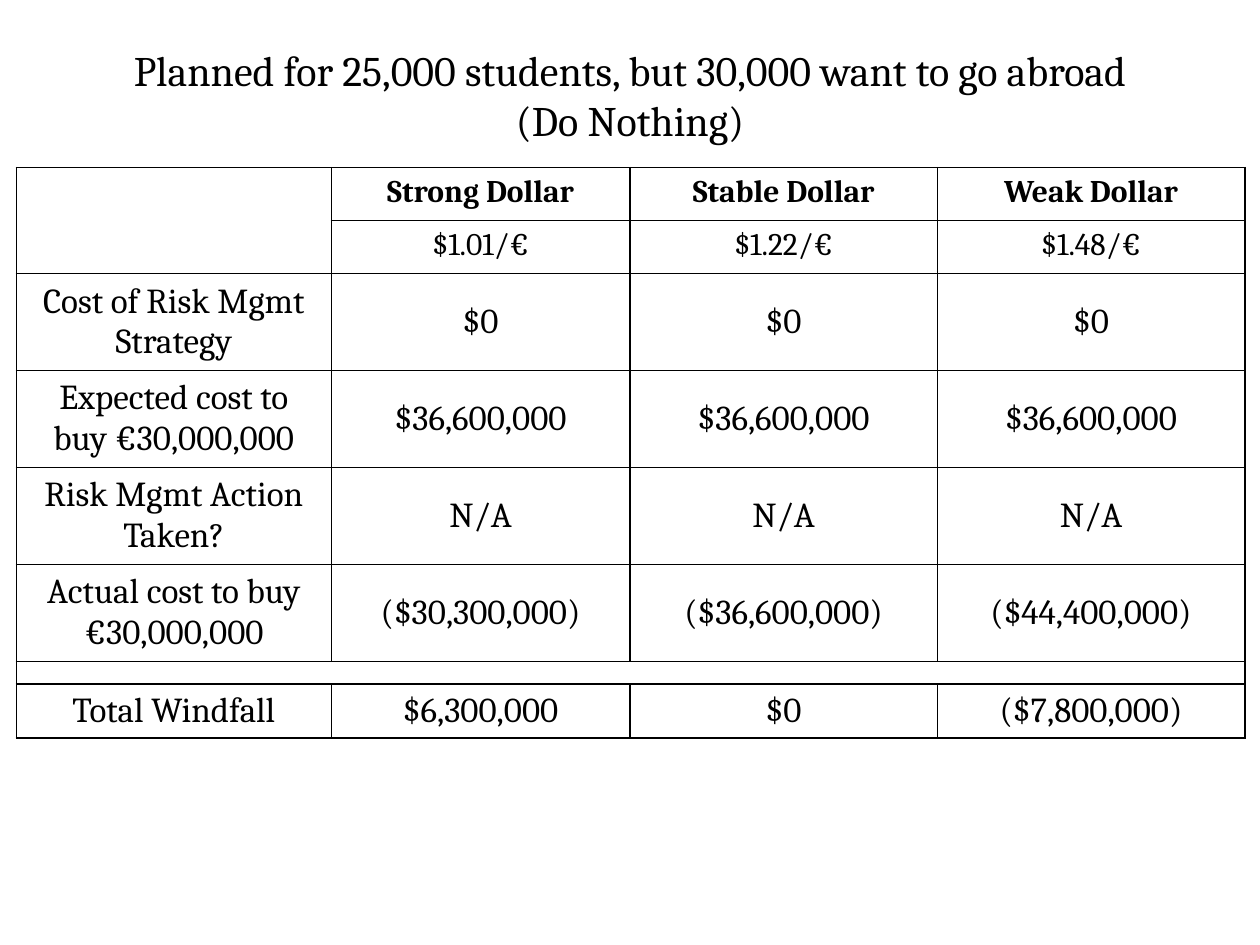
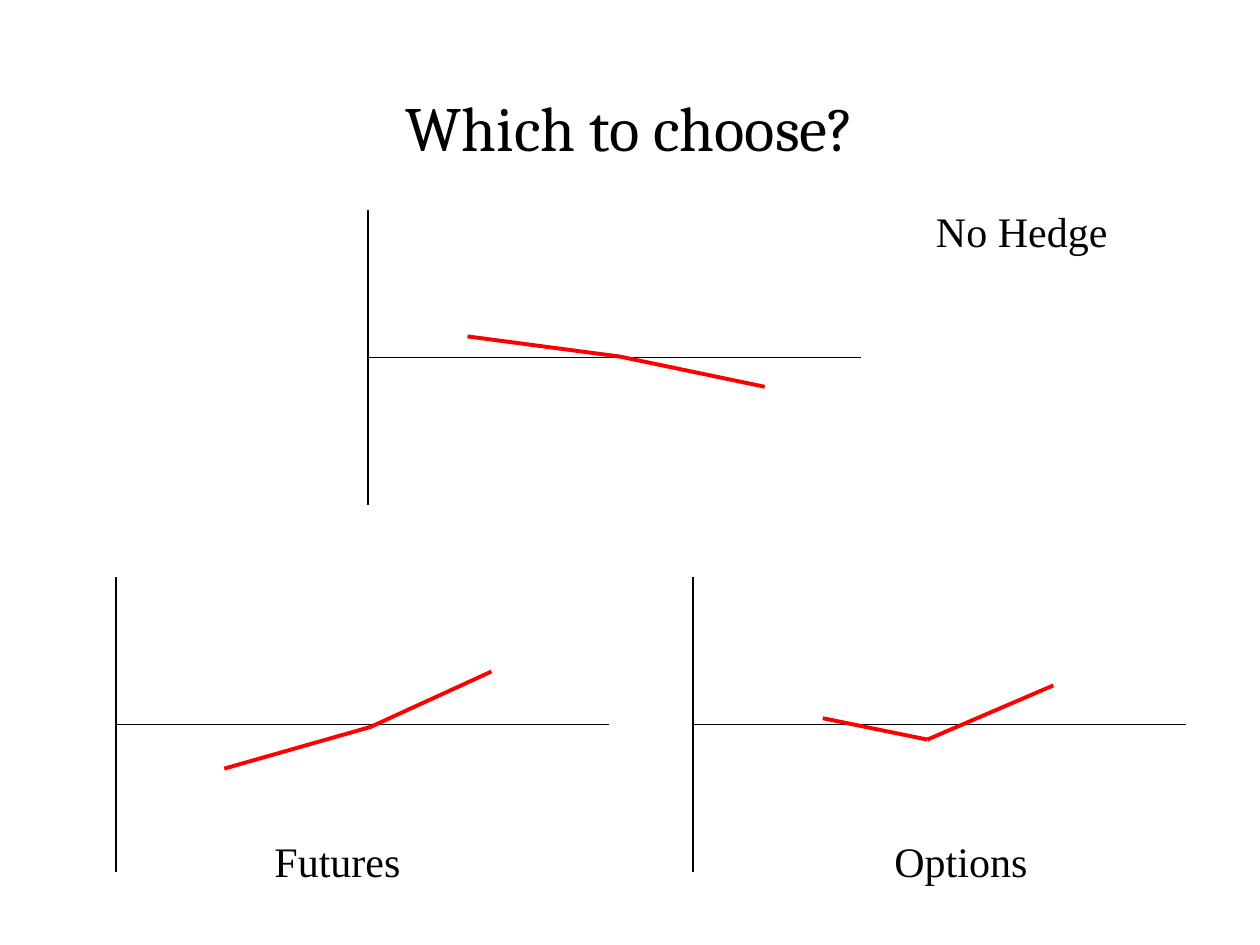
from collections import namedtuple
from dataclasses import dataclass
from itertools import pairwise

from lxml.etree import SubElement
from pptx import Presentation
from pptx.dml.color import RGBColor as Color
from pptx.enum.shapes import MSO_CONNECTOR as Connector
from pptx.enum.text import MSO_ANCHOR as Anchor, MSO_AUTO_SIZE as AutoSize, PP_ALIGN as Align
from pptx.oxml.ns import qn
from pptx.util import Pt

PX = 9144
TITLE_ONLY = 5

Payoff = namedtuple("Payoff", "label label_at axis_at points")


@dataclass(frozen=True)
class Theme:
    """Colours, fonts, type sizes and line widths."""
    ink: str = "000000"
    payoff: str = "FF0000"
    heading_font: str = "Cambria"
    label_font: str = "Times New Roman"
    long_title: int = 24
    title: int = 36
    label: int = 24
    header: int = 18
    body: int = 20
    spacer: int = 6
    border: float = 1
    axis_line: float = 0.75
    payoff_line: float = 2.25


class Deck:
    """Builds pages in one style, with lengths in px."""

    def __init__(self, theme):
        """Open an empty 1000 by 750 px deck."""
        self.theme = theme
        self.show = Presentation()
        self.show.slide_width, self.show.slide_height = 1000 * PX, 750 * PX
        self.page = None

    def add_span(self, frame, text, size, font, bold=False, align=Align.CENTER):
        """Add one styled run to the first paragraph of a frame."""
        para = frame.paragraphs[0]
        para.alignment = align
        span = para.add_run()
        span.text = text
        span.font.name, span.font.size, span.font.bold = font, Pt(size), bold
        span.font.color.rgb = Color.from_string(self.theme.ink)

    def add_page(self, title, top, size):
        """Start a page with a centred title."""
        self.page = self.show.slides.add_slide(self.show.slide_layouts[TITLE_ONLY])
        box = self.page.shapes.title
        box.left, box.top, box.width, box.height = (n * PX for n in (75, top, 850, 100))
        frame = box.text_frame
        frame.word_wrap, frame.auto_size = True, AutoSize.NONE
        frame.vertical_anchor = Anchor.MIDDLE
        self.add_span(frame, title, size, self.theme.heading_font)

    def add_label(self, text, left, top):
        """Add a left-aligned label."""
        box = self.page.shapes.add_textbox(left * PX, top * PX, 158 * PX, 50 * PX)
        box.text_frame.word_wrap = True
        box.text_frame.auto_size = AutoSize.SHAPE_TO_FIT_TEXT
        self.add_span(box.text_frame, text, self.theme.label, self.theme.label_font, align=Align.LEFT)

    def add_line(self, start, end, colour, width):
        """Add a straight line without shadow."""
        ends = (n * PX for n in (*start, *end))
        line = self.page.shapes.add_connector(Connector.STRAIGHT, *ends)
        line.line.color.rgb = Color.from_string(colour)
        line.line.width = Pt(width)
        SubElement(line._element.spPr, qn("a:effectLst"))

    def add_payoff(self, payoff):
        """Add a pair of axes, a payoff line and its label."""
        left, top = payoff.axis_at
        zero = top + 117
        for start, end in (((left, top), (left, top + 234)), ((left, zero), (left + 391, zero))):
            self.add_line(start, end, self.theme.ink, self.theme.axis_line)
        for start, end in pairwise(payoff.points):
            self.add_line(start, end, self.theme.payoff, self.theme.payoff_line)
        self.add_label(payoff.label, *payoff.label_at)

    def style_cell(self, cell):
        """Give a cell black borders and no fill."""
        for side in ("lnL", "lnR", "lnT", "lnB"):
            border = SubElement(cell._tc.get_or_add_tcPr(), qn(f"a:{side}"), w=str(Pt(self.theme.border)))
            fill = SubElement(border, qn("a:solidFill"))
            SubElement(fill, qn("a:srgbClr"), val=self.theme.ink)
        cell.fill.background()

    def shrink_cell(self, cell):
        """Keep an empty cell as low as its row."""
        cell.margin_top = cell.margin_bottom = 0
        para = cell.text_frame.paragraphs[0]
        SubElement(para._p, qn("a:endParaRPr"), sz=str(self.theme.spacer * 100))

    def add_table(self, left, top, widths, heights, rows, header_rows, merges):
        """Add a bordered table whose first rows are headers."""
        size = (len(rows), len(widths))
        area = (n * PX for n in (left, top, sum(widths), sum(heights)))
        table = self.page.shapes.add_table(*size, *area).table
        table.first_row = table.horz_banding = False
        for column, width in zip(table.columns, widths):
            column.width = width * PX
        for r, (height, texts) in enumerate(zip(heights, rows)):
            table.rows[r].height = height * PX
            is_header = r < header_rows
            for c, text in enumerate(texts):
                cell = table.cell(r, c)
                self.style_cell(cell)
                cell.vertical_anchor = Anchor.TOP if is_header else Anchor.MIDDLE
                if text:
                    points = self.theme.header if is_header else self.theme.body
                    self.add_span(cell.text_frame, text, points, self.theme.heading_font, bold=r == 0)
                else:
                    self.shrink_cell(cell)
        for first, last in merges:
            table.cell(*first).merge(table.cell(*last))


OUTCOMES = [
    ("", "Strong Dollar", "Stable Dollar", "Weak Dollar"),
    ("", "$1.01/€", "$1.22/€", "$1.48/€"),
    ("Cost of Risk Mgmt Strategy", *["$0"] * 3),
    ("Expected cost to buy €30,000,000", *["$36,600,000"] * 3),
    ("Risk Mgmt Action Taken?", *["N/A"] * 3),
    ("Actual cost to buy €30,000,000", "($30,300,000)", "($36,600,000)", "($44,400,000)"),
    ("",) * 4,
    ("Total Windfall", "$6,300,000", "$0", "($7,800,000)"),
]

PAYOFFS = [
    Payoff("No Hedge", (733, 158), (292, 167), [(371, 267), (492, 283), (607, 307)]),
    Payoff("Options", (700, 658), (550, 458), [(653, 570), (736, 587), (836, 544)]),
    Payoff("Futures", (208, 658), (92, 458), [(178, 610), (294, 577), (390, 533)]),
]


def main():
    """Build both pages and save the deck."""
    theme = Theme()
    deck = Deck(theme)
    deck.add_page("Planned for 25,000 students, but 30,000 want to go abroad (Do Nothing)", 25, theme.long_title)
    deck.add_table(
        13, 133,
        widths=[250, 237, 244, 244],
        heights=[42, 42, *[77] * 4, 18, 43],
        rows=OUTCOMES,
        header_rows=2,
        merges=[((0, 0), (1, 0)), ((6, 0), (6, 3))],
    )
    deck.add_page("Which to choose?", 50, theme.title)
    for payoff in PAYOFFS:
        deck.add_payoff(payoff)
    deck.show.save("out.pptx")


if __name__ == "__main__":
    main()
